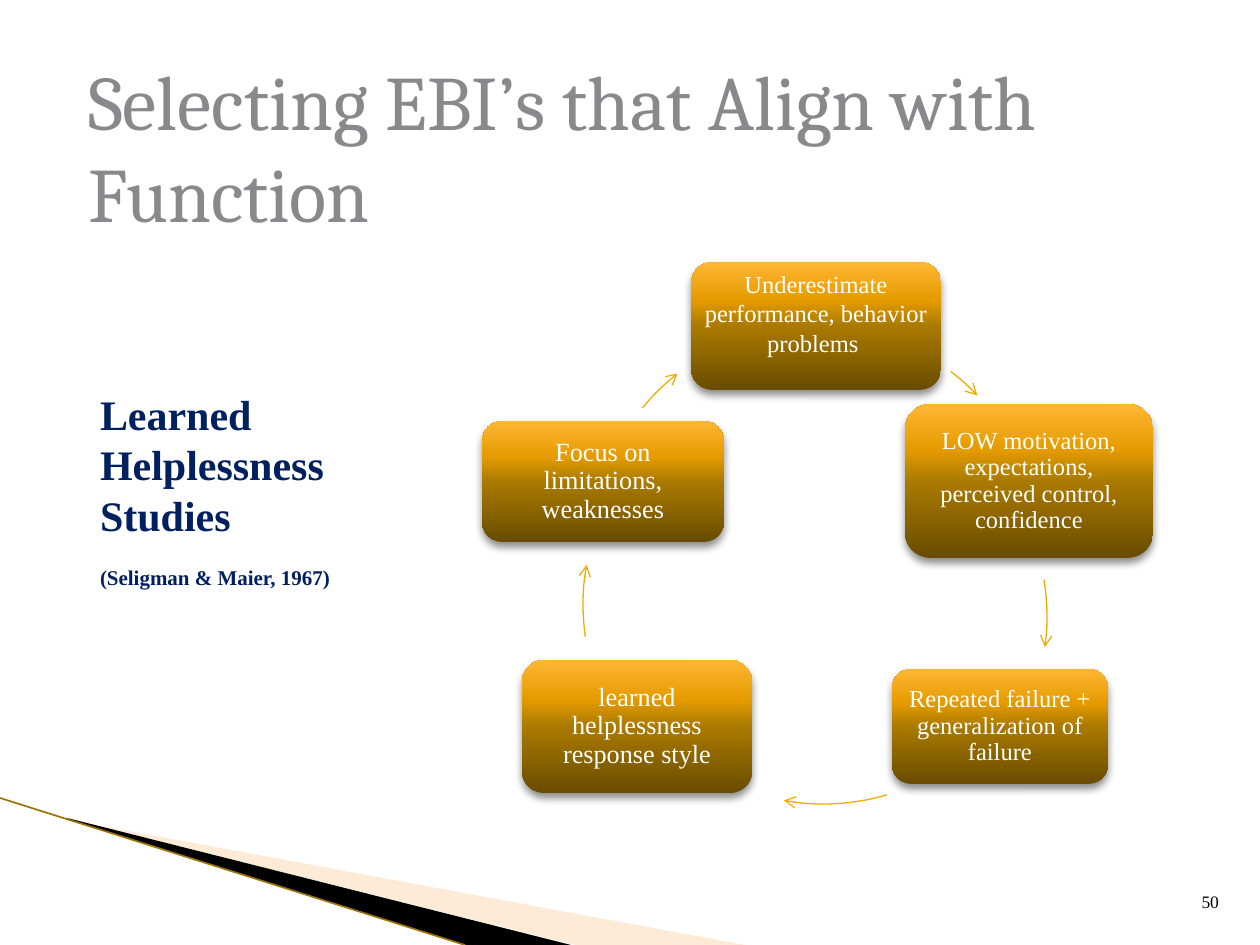
from dataclasses import dataclass

from lxml.etree import SubElement
from pptx import Presentation
from pptx.dml.color import RGBColor
from pptx.enum.shapes import MSO_CONNECTOR, MSO_SHAPE
from pptx.enum.text import MSO_ANCHOR, MSO_AUTO_SIZE, PP_ALIGN
from pptx.oxml.ns import qn
from pptx.util import Emu, Pt

EMU_PER_PX = 914400 / 126
SERIF = "Times New Roman"
NAVY = "002060"
GOLD = "F0AD00"
GRADIENT = [(0, "694C00"), (50, "AA7A00"), (70, "E49B00"), (100, "FFB634")]
CYCLE_DIAMETER = 447
ADJUSTMENT_PER_DEGREE = 0.6

Point = tuple[int, int]


@dataclass
class Stage:
    text: str
    left: int
    top: int
    width: int
    height: int
    size: int = 14
    line_spacing: float = 0.9
    bottom_inset: int = 14


@dataclass
class Arc:
    left: int
    top: int
    start_degrees: float
    end_degrees: float


@dataclass
class Ribbon:
    points: list[Point]
    color: str
    opacity: int = 100


STAGES = [
    Stage("Underestimate performance, behavior problems ", 691, 262, 250, 128,
          line_spacing=1.0, bottom_inset=40),
    Stage("LOW motivation, expectations, perceived control, confidence", 905, 404, 248, 154),
    Stage("Repeated failure + generalization of failure", 892, 669, 216, 115),
    Stage("learned helplessness response style", 522, 660, 230, 133, size=15),
    Stage("Focus on limitations, weaknesses", 482, 421, 242, 121, size=15),
]
ARCS = [
    Arc(592, 326, 307.2, 316.4),
    Arc(600, 393, 350.5, 7.9),
    Arc(600, 357, 73.5, 100.2),
    Arc(583, 381, 171.7, 190.2),
    Arc(592, 326, 219.3, 231.9),
]
RIBBONS = [
    Ribbon([(69, 820), (745, 945), (575, 945), (69, 819)], "FCCF9B", 40),
    Ribbon([(67, 818), (571, 945), (466, 945), (68, 819)], "000000"),
]


def px(value: int) -> Emu:
    return Emu(round(value * EMU_PER_PX))


def rgb(color: str) -> RGBColor:
    return RGBColor.from_string(color)


def place(shape, left: int, top: int, width: int, height: int) -> None:
    shape.left, shape.top = px(left), px(top)
    shape.width, shape.height = px(width), px(height)


def set_frame(frame, anchor, horizontal: int = 0, top: int = 0, bottom: int = 0) -> None:
    frame.auto_size = MSO_AUTO_SIZE.NONE
    frame.word_wrap = True
    frame.vertical_anchor = anchor
    frame.margin_left = frame.margin_right = px(horizontal)
    frame.margin_top, frame.margin_bottom = px(top), px(bottom)


def set_paragraph(paragraph, text: str, size: int, color: str, align=PP_ALIGN.LEFT,
                  name: str = SERIF, bold: bool = False) -> None:
    paragraph.text = text
    paragraph.alignment = align
    paragraph.font.name = name
    paragraph.font.size = Pt(size)
    paragraph.font.bold = bold
    paragraph.font.color.rgb = rgb(color)


def add_ribbon(slide, ribbon: Ribbon) -> None:
    vertices = [(px(x), px(y)) for x, y in ribbon.points]
    builder = slide.shapes.build_freeform(*vertices[0], scale=1.0)
    builder.add_line_segments(vertices[1:])
    shape = builder.convert_to_shape()
    shape.shadow.inherit = False
    shape.fill.solid()
    shape.fill.fore_color.rgb = rgb(ribbon.color)
    shape.line.fill.background()
    if ribbon.opacity < 100:
        color = shape._element.spPr.find(qn("a:solidFill"))[0]
        SubElement(color, qn("a:alpha"), val=str(ribbon.opacity * 1000))


def add_edge(slide) -> None:
    edge = slide.shapes.add_connector(MSO_CONNECTOR.STRAIGHT, 0, px(798), px(465), px(945))
    edge.line.color.rgb = rgb("9C7200")
    edge.line.width = Pt(0.95)
    SubElement(edge._element.spPr, qn("a:effectLst"))


def add_arc(slide, arc: Arc) -> None:
    shape = slide.shapes.add_shape(MSO_SHAPE.ARC, px(arc.left), px(arc.top),
                                   px(CYCLE_DIAMETER), px(CYCLE_DIAMETER))
    for index, degrees in enumerate((arc.start_degrees, arc.end_degrees)):
        shape.adjustments[index] = degrees * ADJUSTMENT_PER_DEGREE
    shape.shadow.inherit = False
    shape.fill.background()
    shape.line.color.rgb = rgb(GOLD)
    shape.line.width = Pt(0.75)
    SubElement(shape.line._get_or_add_ln(), qn("a:tailEnd"), type="arrow")


def add_stage(slide, stage: Stage) -> None:
    shape = slide.shapes.add_shape(MSO_SHAPE.ROUNDED_RECTANGLE, px(stage.left), px(stage.top),
                                   px(stage.width), px(stage.height))
    shape.line.fill.background()
    shape.fill.gradient()
    shape.fill.gradient_angle = 90
    properties = shape._element.spPr
    stops = properties.find(qn("a:gradFill")).find(qn("a:gsLst"))
    for stop in list(stops):
        stops.remove(stop)
    for position, color in GRADIENT:
        stop = SubElement(stops, qn("a:gs"), pos=str(position * 1000))
        SubElement(stop, qn("a:srgbClr"), val=color)
    shape.shadow.inherit = False
    shadow = SubElement(properties.find(qn("a:effectLst")), qn("a:outerShdw"),
                        blurRad=str(Pt(5)), dist=str(Pt(3)), dir="5400000", rotWithShape="0")
    shadow_color = SubElement(shadow, qn("a:srgbClr"), val="000000")
    SubElement(shadow_color, qn("a:alpha"), val="45000")
    set_frame(shape.text_frame, MSO_ANCHOR.MIDDLE, 7, 14, stage.bottom_inset)
    paragraph = shape.text_frame.paragraphs[0]
    set_paragraph(paragraph, stage.text, stage.size, "FFFFFF", PP_ALIGN.CENTER)
    paragraph.line_spacing = stage.line_spacing


def add_title(slide) -> None:
    title = slide.shapes.title
    place(title, 88, 54, 1144, 184)
    set_frame(title.text_frame, MSO_ANCHOR.BOTTOM)
    set_paragraph(title.text_frame.paragraphs[0], "Selecting EBI’s that Align with Function",
                  44, "88888D", name="Cambria")


def add_study(slide) -> None:
    body = slide.placeholders[1]
    place(body, 88, 367, 316, 244)
    frame = body.text_frame
    set_frame(frame, MSO_ANCHOR.MIDDLE, 12, 6, 6)
    lines = [("Learned Helplessness Studies", 24, 0), ("(Seligman & Maier, 1967)", 12, 14)]
    for index, (text, size, space_before) in enumerate(lines):
        paragraph = frame.add_paragraph() if index else frame.paragraphs[0]
        properties = paragraph._p.get_or_add_pPr()
        properties.set("marL", "0")
        properties.set("indent", "0")
        SubElement(properties, qn("a:buNone"))
        set_paragraph(paragraph, text, size, NAVY, bold=True)
        paragraph.space_before = Pt(space_before)


def add_slide_number(slide) -> None:
    number = slide.shapes.add_textbox(px(1179), px(891), px(40), px(22))
    set_frame(number.text_frame, MSO_ANCHOR.MIDDLE)
    set_paragraph(number.text_frame.paragraphs[0], "50", 10, "000000", PP_ALIGN.RIGHT)


def main() -> None:
    presentation = Presentation()
    presentation.slide_width, presentation.slide_height = px(1260), px(945)
    slide = presentation.slides.add_slide(presentation.slide_layouts[1])
    for ribbon in RIBBONS:
        add_ribbon(slide, ribbon)
    add_edge(slide)
    for stage, arc in zip(STAGES, ARCS):
        add_stage(slide, stage)
        add_arc(slide, arc)
    add_title(slide)
    add_study(slide)
    add_slide_number(slide)
    presentation.save("out.pptx")


if __name__ == "__main__":
    main()
